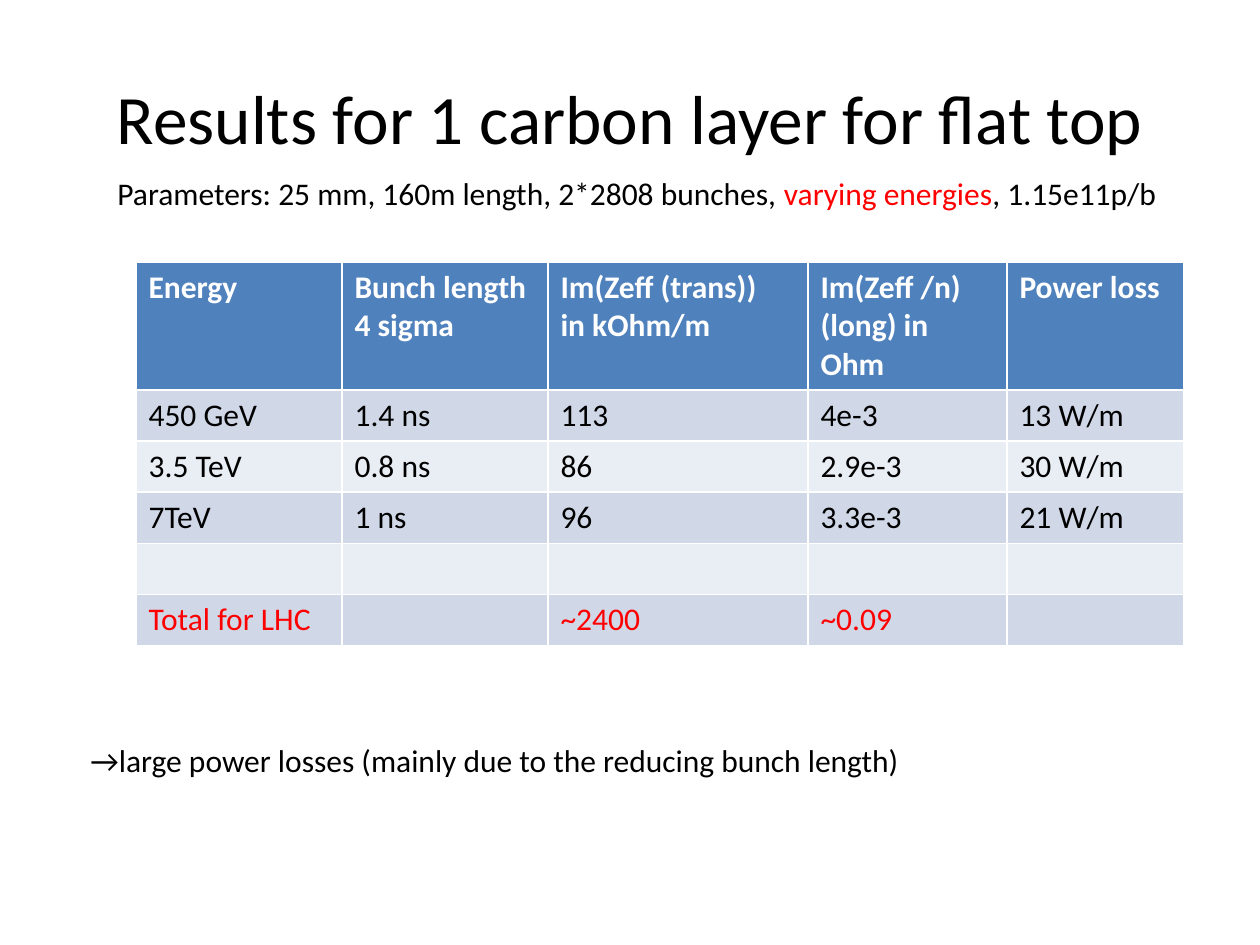
from pptx import Presentation
from pptx import util as u
from pptx.dml.color import RGBColor
from pptx.enum import text

FONT = "Calibri"
BLACK, WHITE, RED = "000000", "FFFFFF", "FF0000"
HEADER_FILL, BAND_FILLS = "4F81BD", ("D0D8E8", "E9EDF4")

TITLE = "Results for 1 carbon layer for flat top"
PARAMETERS = [
    ("Parameters: 25 mm, 160m length, 2*2808 bunches, ", BLACK),
    ("varying energies", RED),
    (", 1.15e11p/b", BLACK),
]
CONCLUSION = [("→large power losses (mainly due to the reducing bunch length)", BLACK)]
ROWS = [
    ["Energy", "Bunch length 4 sigma", "Im(Zeff (trans))\nin kOhm/m",
     "Im(Zeff /n) (long) in Ohm", "Power loss"],
    ["450 GeV", "1.4 ns", "113", "4e-3", "13 W/m"],
    ["3.5 TeV", "0.8 ns", "86", "2.9e-3", "30 W/m"],
    ["7TeV", "1 ns", "96", "3.3e-3", "21 W/m"],
    ["", "", "", "", ""],
    ["Total for LHC", "", "~2400", "~0.09", ""],
]
COLUMN_WIDTHS = [206, 206, 260, 199, 177]
HEADER_HEIGHT, ROW_HEIGHT = 127, 51


def px(*lengths):
    return [u.Emu(round(length * 914400 / 126)) for length in lengths]


def colour(value):
    return RGBColor.from_string(value)


def add_span(para, words, value, size=18, bold=False):
    for index, line in enumerate(words.split("\n")):
        if index:
            para.add_line_break()
        span = para.add_run()
        span.text = line
        span.font.name = FONT
        span.font.size = u.Pt(size)
        span.font.bold = bold
        span.font.color.rgb = colour(value)


def add_title(page):
    title = page.shapes.title
    title.left, title.top, title.width, title.height = px(63, 38, 1134, 157)
    title.text_frame.vertical_anchor = text.MSO_ANCHOR.MIDDLE
    para = title.text_frame.paragraphs[0]
    para.alignment = text.PP_ALIGN.CENTER
    add_span(para, TITLE, BLACK, 39.6)


def add_line(page, place, spans):
    box = page.shapes.add_textbox(*px(*place))
    box.text_frame.word_wrap = False
    box.text_frame.auto_size = text.MSO_AUTO_SIZE.SHAPE_TO_FIT_TEXT
    for words, value in spans:
        add_span(box.text_frame.paragraphs[0], words, value)


def add_results(page):
    heights = [HEADER_HEIGHT] + [ROW_HEIGHT] * (len(ROWS) - 1)
    place = px(136, 262, sum(COLUMN_WIDTHS), sum(heights))
    table = page.shapes.add_table(len(ROWS), len(COLUMN_WIDTHS), *place).table
    for column, width in zip(table.columns, px(*COLUMN_WIDTHS)):
        column.width = width
    for row, height in zip(table.rows, px(*heights)):
        row.height = height
    for r, values in enumerate(ROWS):
        header, total = r == 0, r == len(ROWS) - 1
        fill = HEADER_FILL if header else BAND_FILLS[(r - 1) % 2]
        ink = WHITE if header else RED if total else BLACK
        for c, words in enumerate(values):
            cell = table.cell(r, c)
            cell.fill.solid()
            cell.fill.fore_color.rgb = colour(fill)
            if words:
                add_span(cell.text_frame.paragraphs[0], words, ink, bold=header)


def main():
    deck = Presentation()
    deck.slide_width, deck.slide_height = px(1260, 945)
    page = deck.slides.add_slide(deck.slide_layouts[5])
    add_title(page)
    add_results(page)
    add_line(page, (105, 168, 1076, 51), PARAMETERS)
    add_line(page, (78, 735, 847, 51), CONCLUSION)
    deck.save("out.pptx")


if __name__ == "__main__":
    main()
